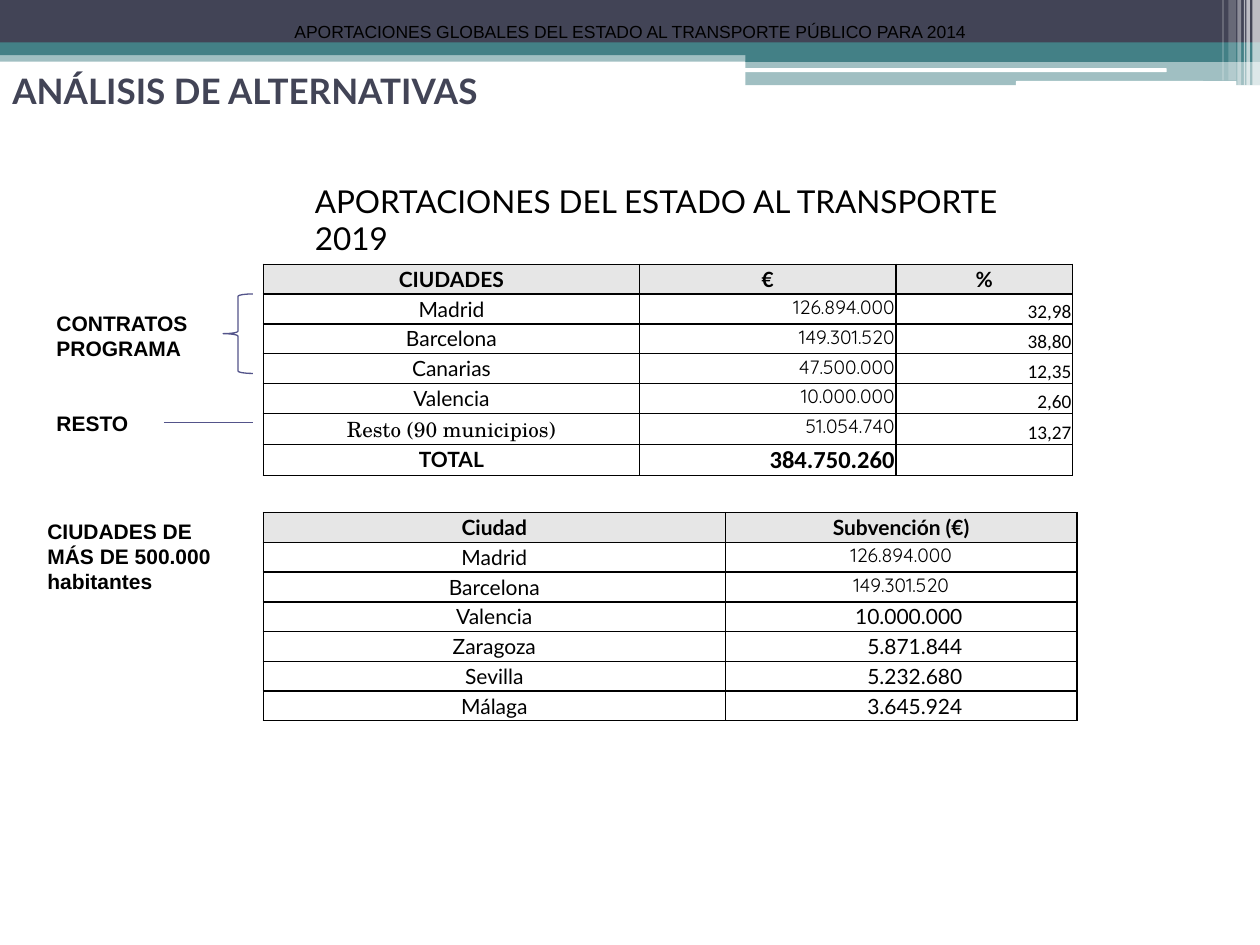
from pptx import Presentation
from pptx.dml.color import RGBColor
from pptx.enum.shapes import MSO_CONNECTOR, MSO_SHAPE
from pptx.enum.text import MSO_ANCHOR, MSO_AUTO_SIZE, PP_ALIGN
from pptx.oxml.ns import qn
from pptx.util import Pt
from lxml import etree

RECT, ROUND, BRACE = MSO_SHAPE.RECTANGLE, MSO_SHAPE.ROUNDED_RECTANGLE, MSO_SHAPE.LEFT_BRACE
STRAIGHT = MSO_CONNECTOR.STRAIGHT
LEFT, CENTER, RIGHT = PP_ALIGN.LEFT, PP_ALIGN.CENTER, PP_ALIGN.RIGHT
TOP, MIDDLE, BOTTOM = MSO_ANCHOR.TOP, MSO_ANCHOR.MIDDLE, MSO_ANCHOR.BOTTOM

BLACK, WHITE, GREY = "000000", "FFFFFF", "E6E6E6"
SLATE, TEAL, VIOLET = "424456", "438086", "53548A"

WIDE, TIGHT = (5, 0, 5, 0), (0.7, 0.7, 0.7, 0)
LABEL = dict(font="Lato", size=12, align=CENTER, anchor=MIDDLE, insets=WIDE)
HEAD = dict(LABEL, bold=True, fill=GREY)
TOTAL = dict(LABEL, bold=True)
SERIF = dict(LABEL, font="TeX Gyre Schola")
AMOUNT = dict(font="Quicksand", size=11, align=RIGHT, anchor=TOP, insets=TIGHT)
CENTERED_AMOUNT = dict(AMOUNT, align=CENTER)
PERCENT = dict(AMOUNT, font="Calibri", anchor=BOTTOM)
SUM = dict(PERCENT, size=14, bold=True)
INDENTED_AMOUNT = dict(LABEL, align=RIGHT, insets=(5, 0, 65.5, 0))


def color(code):
    return RGBColor.from_string(code)


class SlideBuilder:
    def __init__(self, page):
        self.page = page

    def shape(self, kind, box, fill=None, opacity=100, line=None):
        shape = self.page.shapes.add_shape(kind, *map(Pt, box))
        shape.shadow.inherit = False
        if fill:
            shape.fill.solid()
            shape.fill.fore_color.rgb = color(fill)
            if opacity < 100:
                tone = shape._element.spPr.find(".//" + qn("a:srgbClr"))
                etree.SubElement(tone, qn("a:alpha"), val=str(opacity * 1000))
        else:
            shape.fill.background()
        if line:
            self.outline(shape, line)
        else:
            shape.line.fill.background()

    def outline(self, shape, code):
        shape.line.color.rgb = color(code)
        shape.line.width = Pt(0.75)

    def line(self, start, end, code):
        line = self.page.shapes.add_connector(STRAIGHT, *map(Pt, start + end))
        self.outline(line, code)
        etree.SubElement(line._element.spPr, qn("a:effectLst"))

    def fill_para(self, para, text, font, size, align=LEFT, bold=False, code=BLACK):
        para.alignment = align
        if not text:
            etree.SubElement(para._p, qn("a:endParaRPr"), sz=str(size * 100))
            return
        span = para.add_run()
        span.text = text
        for name, value in dict(name=font, size=Pt(size), bold=bold).items():
            setattr(span.font, name, value)
        span.font.color.rgb = color(code)

    def text(self, box, lines, anchor=TOP, wrap=True, gap=0, **style):
        frame = self.page.shapes.add_textbox(*map(Pt, box)).text_frame
        settings = dict(word_wrap=wrap, vertical_anchor=anchor, auto_size=MSO_AUTO_SIZE.NONE)
        for name, value in settings.items():
            setattr(frame, name, value)
        for index, line in enumerate(lines):
            para = frame.add_paragraph() if index else frame.paragraphs[0]
            if index:
                para.space_before = Pt(gap)
            self.fill_para(para, line, **style)

    def table(self, left, top, widths, row_height, rows):
        """Each row is a list of (text, cell style) pairs."""
        table = self.page.shapes.add_table(
            len(rows), len(widths), Pt(left), Pt(top),
            Pt(sum(widths)), Pt(row_height * len(rows))).table
        table.first_row = table.horz_banding = False
        for column, width in zip(table.columns, widths):
            column.width = Pt(width)
        for row_index, row in enumerate(rows):
            table.rows[row_index].height = Pt(row_height)
            for column_index, (text, style) in enumerate(row):
                self.cell(table.cell(row_index, column_index), text, **style)

    def cell(self, cell, text, anchor, insets, fill=None, **style):
        for side, inset in zip(("left", "top", "right", "bottom"), insets):
            setattr(cell, "margin_" + side, Pt(inset))
        cell.vertical_anchor = anchor
        properties = cell._tc.get_or_add_tcPr()
        for side in ("lnL", "lnR", "lnT", "lnB"):
            border = etree.SubElement(properties, qn("a:" + side), w=str(Pt(1)))
            paint = etree.SubElement(border, qn("a:solidFill"))
            etree.SubElement(paint, qn("a:srgbClr"), val=BLACK)
        if fill:
            cell.fill.solid()
            cell.fill.fore_color.rgb = color(fill)
        else:
            cell.fill.background()
        self.fill_para(cell.text_frame.paragraphs[0], text, **style)


def draw_header(slide):
    bands = [
        (RECT, (0, 28.8, 720, 6.5), TEAL, 50),
        (RECT, (0, 0, 720, 24.5), SLATE, 100),
        (RECT, (0, 24.3, 720, 7.2), TEAL, 100),
        (RECT, (426, 28.2, 294, 7.2), TEAL, 100),
        (RECT, (426, 34.7, 294, 14), TEAL, 50),
        (ROUND, (425.5, 39, 241.2, 2.2), WHITE, 100),
        (ROUND, (580.5, 46.3, 126, 2.8), WHITE, 100),
    ]
    for kind, box, fill, opacity in bands:
        slide.shape(kind, box, fill, opacity)
    stripes = [(715.7, 4.3, 49, 65), (712.2, 2.1, 49, 65), (710.8, 0.7, 49, 60),
               (707.1, 2.1, 49, 40), (702, 4.3, 46, 20), (698.5, 0.7, 46, 30)]
    for left, width, height, opacity in stripes:
        slide.shape(RECT, (left, 0, width, height), WHITE, opacity)


def main():
    deck = Presentation()
    deck.slide_width, deck.slide_height = Pt(720), Pt(540)
    slide = SlideBuilder(deck.slides.add_slide(deck.slide_layouts[6]))
    draw_header(slide)

    slide.text((0, 0, 720, 36), ["APORTACIONES GLOBALES DEL ESTADO AL TRANSPORTE PÚBLICO PARA 2014"],
               anchor=MIDDLE, wrap=False, font="Arial", size=10, align=CENTER)
    slide.text((172.8, 100.2, 448, 29), ["APORTACIONES DEL ESTADO AL TRANSPORTE 2019"],
               font="Lato", size=18)
    slide.text((0, 9.4, 648, 84.2), ["ANÁLISIS DE ALTERNATIVAS"],
               anchor=MIDDLE, font="Lato", size=20, bold=True, code=SLATE)

    contributions = [("Madrid", "126.894.000", "32,98"),
                     ("Barcelona", "149.301.520", "38,80"),
                     ("Canarias", "47.500.000", "12,35"),
                     ("Valencia", "10.000.000", "2,60"),
                     ("Resto (90 municipios)", "51.054.740", "13,27")]
    rows = [[(title, HEAD) for title in ("CIUDADES", "€", "%")]]
    for city, amount, percent in contributions:
        label = SERIF if city.startswith("Resto") else LABEL
        rows.append([(city, label), (amount, AMOUNT), (percent, PERCENT)])
    rows.append([("TOTAL", TOTAL), ("384.750.260", SUM), ("", PERCENT)])
    slide.table(150.5, 151, (215, 146.5, 101), 17.05, rows)

    subsidies = [("Madrid", "126.894.000", CENTERED_AMOUNT),
                 ("Barcelona", "149.301.520", CENTERED_AMOUNT),
                 ("Valencia", "10.000.000", INDENTED_AMOUNT),
                 ("Zaragoza", "5.871.844", INDENTED_AMOUNT),
                 ("Sevilla", "5.232.680", INDENTED_AMOUNT),
                 ("Málaga", "3.645.924", INDENTED_AMOUNT)]
    rows = [[(title, HEAD) for title in ("Ciudad", "Subvención (€)")]]
    rows += [[(city, LABEL), (amount, style)] for city, amount, style in subsidies]
    slide.table(150.5, 293, (264, 201), 17, rows)

    note = dict(font="Arial", size=12, bold=True)
    slide.text((20, 292.5, 119, 51), ["CIUDADES DE MÁS DE 500.000 habitantes"], **note)
    slide.text((25.2, 173.8, 108, 80), ["CONTRATOS PROGRAMA", "RESTO"], gap=28.5, **note)
    slide.shape(BRACE, (127.5, 168, 17, 45.4), line=VIOLET)
    slide.line((93.6, 241.6), (144.5, 241.6), VIOLET)
    deck.save("out.pptx")


if __name__ == "__main__":
    main()
